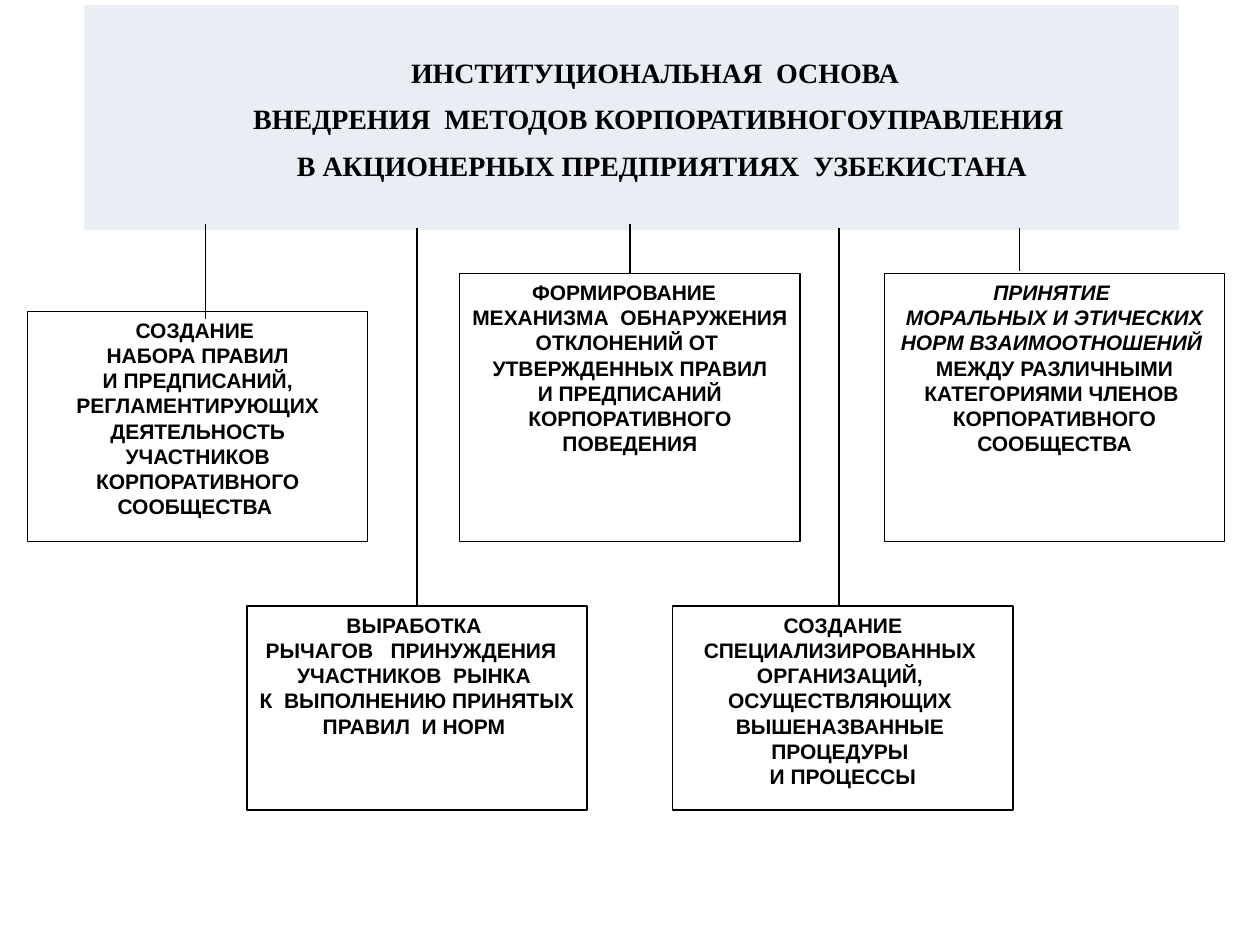
from typing import NamedTuple

from lxml import etree
from pptx import Presentation
from pptx.dml.color import RGBColor
from pptx.enum.shapes import MSO_CONNECTOR, MSO_SHAPE
from pptx.enum.text import MSO_ANCHOR, PP_ALIGN
from pptx.oxml.ns import qn
from pptx.util import Inches, Pt

RECT = MSO_SHAPE.RECTANGLE
LINE = MSO_CONNECTOR.STRAIGHT
TOP = MSO_ANCHOR.TOP
CENTER = PP_ALIGN.CENTER

BLACK, WHITE, PALE = "000000", "FFFFFF", "E9EDF4"
WIDTH = 2.7  # every box
THIN = 0.75


class Box(NamedTuple):
    left: float
    top: float
    height: float
    text: tuple  # paragraphs; the part before "|" is italic


class Link(NamedTuple):
    x: float
    top: float
    end: float
    box: int | None = None  # box whose top middle the line meets


TITLE = (
    "ИНСТИТУЦИОНАЛЬНАЯ  ОСНОВА  ",
    "ВНЕДРЕНИЯ  МЕТОДОВ КОРПОРАТИВНОГОУПРАВЛЕНИЯ ",
    "В АКЦИОНЕРНЫХ ПРЕДПРИЯТИЯХ  УЗБЕКИСТАНА",
)

BOXES = (
    Box(0.22, 2.47, 1.83, (
        "СОЗДАНИЕ ",
        "НАБОРА ПРАВИЛ",
        "И ПРЕДПИСАНИЙ, РЕГЛАМЕНТИРУЮЩИХ ДЕЯТЕЛЬНОСТЬ УЧАСТНИКОВ "
        "КОРПОРАТИВНОГО СООБЩЕСТВА ",
    )),
    Box(3.65, 2.17, 2.13, (
        "ФОРМИРОВАНИЕ  ",
        "МЕХАНИЗМА  ОБНАРУЖЕНИЯ ОТКЛОНЕНИЙ ОТ  УТВЕРЖДЕННЫХ ПРАВИЛ",
        "И ПРЕДПИСАНИЙ КОРПОРАТИВНОГО ПОВЕДЕНИЯ",
    )),
    Box(7.02, 2.17, 2.13, (
        "ПРИНЯТИЕ |",
        "МОРАЛЬНЫХ И ЭТИЧЕСКИХ НОРМ ВЗАИМООТНОШЕНИЙ  |"
        "МЕЖДУ РАЗЛИЧНЫМИ КАТЕГОРИЯМИ ЧЛЕНОВ  КОРПОРАТИВНОГО СООБЩЕСТВА",
    )),
    Box(1.96, 4.81, 1.62, (
        "ВЫРАБОТКА ",
        "РЫЧАГОВ   ПРИНУЖДЕНИЯ   УЧАСТНИКОВ  РЫНКА ",
        "К  ВЫПОЛНЕНИЮ ПРИНЯТЫХ ",
        "ПРАВИЛ  И НОРМ ",
    )),
    Box(5.34, 4.81, 1.62, (
        "СОЗДАНИЕ СПЕЦИАЛИЗИРОВАННЫХ  ОРГАНИЗАЦИЙ,  ОСУЩЕСТВЛЯЮЩИХ  "
        "ВЫШЕНАЗВАННЫЕ  ПРОЦЕДУРЫ ",
        "И ПРОЦЕССЫ",
    )),
)

LINKS = (
    Link(1.63, 1.78, 2.53),
    Link(8.09, 1.81, 2.15),
    Link(5.0, 1.78, 2.17, 1),
    Link(3.31, 1.81, 4.81, 3),
    Link(6.66, 1.81, 4.81),
)


def color(code: str) -> RGBColor:
    return RGBColor.from_string(code)


def write(frame, text: tuple, *, font="Arial", size=12, space=None, indent=0) -> None:
    """Fill a text frame with bold centred paragraphs."""
    frame.word_wrap = True
    for i, part in enumerate(text):
        para = frame.paragraphs[0] if i == 0 else frame.add_paragraph()
        para.alignment = CENTER
        if space:
            para.line_spacing = space
        if indent:
            para._p.get_or_add_pPr().set("indent", str(Inches(indent)))
        slant, _, plain = part.rpartition("|")
        for words, italic in ((slant, True), (plain, False)):
            if words:
                run = para.add_run()
                run.text = words
                run.font.name = font
                run.font.size = Pt(size)
                run.font.bold = True
                run.font.italic = italic
                run.font.color.rgb = color(BLACK)


def edge(cell, code: str, width: float) -> None:
    """Draw the four borders of a cell."""
    props = cell._tc.get_or_add_tcPr()
    for i, side in enumerate(("lnL", "lnR", "lnT", "lnB")):
        line = etree.Element(qn(f"a:{side}"), w=str(Pt(width)))
        fill = etree.SubElement(line, qn("a:solidFill"))
        etree.SubElement(fill, qn("a:srgbClr"), val=code)
        props.insert(i, line)


def add_title(slide) -> None:
    frame = slide.shapes.add_table(
        1, 1, Inches(0.66), Inches(0.03), Inches(8.7), Inches(1.8))
    cell = frame.table.cell(0, 0)
    cell.fill.solid()
    cell.fill.fore_color.rgb = color(PALE)
    cell.margin_left = cell.margin_right = Inches(0.07)
    cell.margin_top, cell.margin_bottom = Inches(0.31), 0
    cell.vertical_anchor = TOP
    edge(cell, WHITE, 1)
    write(cell.text_frame, TITLE, font="Times New Roman", size=16,
          space=1.5, indent=0.49)


def add_box(slide, box: Box):
    shape = slide.shapes.add_shape(
        RECT, Inches(box.left), Inches(box.top), Inches(WIDTH), Inches(box.height))
    shape.shadow.inherit = False
    shape.fill.solid()
    shape.fill.fore_color.rgb = color(WHITE)
    shape.line.color.rgb = color(BLACK)
    shape.line.width = Pt(THIN)
    shape.text_frame.vertical_anchor = TOP
    write(shape.text_frame, box.text)
    return shape


def add_link(slide, link: Link, shapes: list) -> None:
    x = Inches(link.x)
    line = slide.shapes.add_connector(LINE, x, Inches(link.top), x, Inches(link.end))
    line.line.color.rgb = color(BLACK)
    line.line.width = Pt(THIN)
    etree.SubElement(line._element.spPr, qn("a:effectLst"))
    if link.box is not None:
        line.end_connect(shapes[link.box], 0)


def main() -> None:
    deck = Presentation()
    deck.slide_width, deck.slide_height = Inches(10), Inches(7.5)
    slide = deck.slides.add_slide(deck.slide_layouts[6])

    # Title band
    add_title(slide)

    # Boxes, then the lines that hang them from the title
    shapes = [add_box(slide, box) for box in BOXES]
    for link in LINKS:
        add_link(slide, link, shapes)

    deck.save("out.pptx")


if __name__ == "__main__":
    main()
